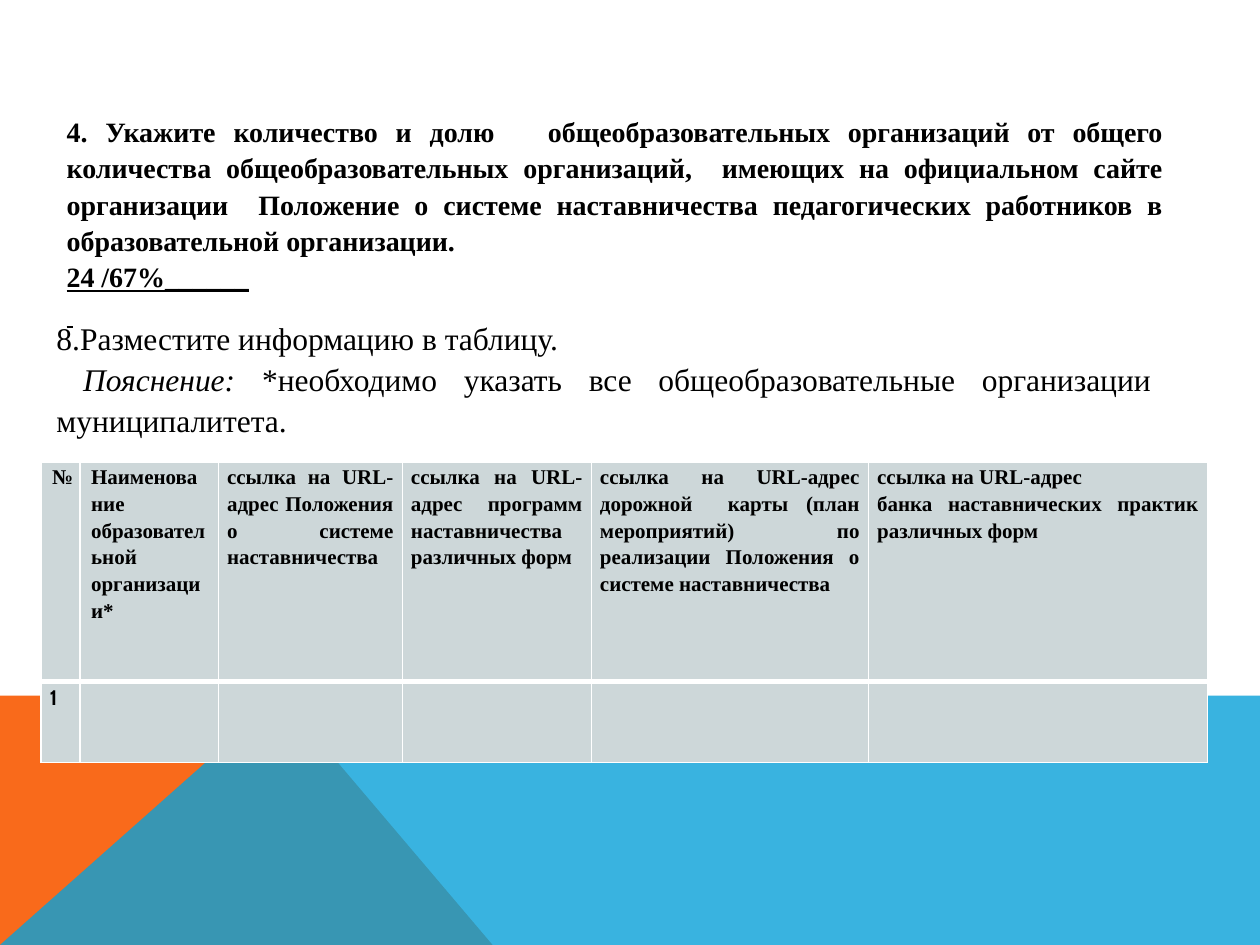
from lxml.etree import SubElement
from pptx import Presentation
from pptx.dml.color import RGBColor
from pptx.enum.text import MSO_ANCHOR, PP_ALIGN
from pptx.oxml.ns import qn
from pptx.util import Pt

COLORS = {"text": "000000", "orange": "F96A1B", "blue": "08A1D9",
          "cell": "CDD7D9", "border": "FFFFFF"}
SERIF = "Times New Roman"
HEADERS = [
    ["№"],
    ["Наименование образовательной организации*"],
    ["ссылка на URL-адрес Положения о системе наставничества "],
    ["ссылка на URL-адрес программ наставничества различных форм"],
    ["ссылка на URL-адрес дорожной  карты (план мероприятий) по реализации "
     "Положения о системе наставничества"],
    ["ссылка на URL-адрес", "банка наставнических практик различных форм"],
]
COL_WIDTHS = [22.3, 79.2, 105.1, 108, 158.4, 193.7]
ROW_HEIGHTS = [125.3, 46.1]


def rgb(name):
    return RGBColor.from_string(COLORS[name])


def add_run(p, text, size, font=SERIF, bold=False, italic=False, underline=False):
    r = p.add_run()
    r.text = text
    f = r.font
    f.size, f.name, f.color.rgb = Pt(size), font, rgb("text")
    f.bold, f.italic, f.underline = bold, italic, underline


def add_paragraph(tf, index, spacing, align=PP_ALIGN.JUSTIFY):
    p = tf.add_paragraph() if index else tf.paragraphs[0]
    p.alignment, p.line_spacing = align, spacing
    return p


def add_text(s, left, top, width, height, size, paragraphs, anchor=MSO_ANCHOR.TOP):
    tf = s.shapes.add_textbox(Pt(left), Pt(top), Pt(width), Pt(height)).text_frame
    tf.word_wrap, tf.vertical_anchor = True, anchor
    for i, runs in enumerate(paragraphs):
        p = add_paragraph(tf, i, 1.08)
        for text, style in runs:
            add_run(p, text, size, **style)


def add_polygon(s, points, color, alpha=None):
    start, *rest = [(Pt(x), Pt(y)) for x, y in points]
    fb = s.shapes.build_freeform(*start)
    fb.add_line_segments(rest, close=True)
    sp = fb.convert_to_shape()
    sp.shadow.inherit = False
    sp.fill.solid()
    sp.fill.fore_color.rgb = rgb(color)
    sp.line.fill.background()
    if alpha:
        clr = sp.fill._xPr.find(qn("a:solidFill"))[0]
        SubElement(clr, qn("a:alpha"), val=str(alpha * 1000))


def add_footer(s, left, top, width, height):
    right, bottom, peak = left + width, top + height, left + 160.6
    add_polygon(s, [(left, bottom), (left, top), (peak, top),
                    (left + 281.5, bottom)], "orange")
    add_polygon(s, [(left, bottom), (peak, top), (right, top),
                    (right, bottom)], "blue", 80)


def style_cell(cell, bottom_width):
    cell.margin_left = cell.margin_right = Pt(5)
    cell.margin_top = cell.margin_bottom = 0
    tc_pr = cell._tc.get_or_add_tcPr()
    for side, width in zip("LRTB", (1, 1, 1, bottom_width)):
        ln = SubElement(tc_pr, qn(f"a:ln{side}"), w=str(Pt(width)))
        SubElement(SubElement(ln, qn("a:solidFill")), qn("a:srgbClr"),
                   val=COLORS["border"])
    cell.fill.solid()
    cell.fill.fore_color.rgb = rgb("cell")


def set_indent(p, margin, indent=0):
    p_pr = p._p.get_or_add_pPr()
    p_pr.set("marL", str(Pt(margin)))
    p_pr.set("indent", str(Pt(indent)))


def add_links_table(s, left, top):
    tbl = s.shapes.add_table(len(ROW_HEIGHTS), len(COL_WIDTHS), Pt(left), Pt(top),
                             Pt(sum(COL_WIDTHS)), Pt(sum(ROW_HEIGHTS))).table
    for col, width in zip(tbl.columns, COL_WIDTHS):
        col.width = Pt(width)
    for row, height, bottom in zip(tbl.rows, ROW_HEIGHTS, (3, 1)):
        row.height = Pt(height)
        for cell in row.cells:
            style_cell(cell, bottom)
    for c, lines in enumerate(HEADERS):
        for i, line in enumerate(lines):
            p = add_paragraph(tbl.cell(0, c).text_frame, i, 1.15)
            if c < 2:
                set_indent(p, 1.5)
            add_run(p, line, 12, bold=True)
    p = add_paragraph(tbl.cell(1, 0).text_frame, 0, 1.15, PP_ALIGN.LEFT)
    set_indent(p, 14.4, -14.4)
    add_run(p, "1", 12, "Cabin", bold=True)


def add_question(s, left, top, width, height):
    bold, answer = {"bold": True}, {"bold": True, "underline": True}
    add_text(s, left, top, width, height, 16, [
        [("4. Укажите количество и долю   общеобразовательных организаций от общего "
          "количества общеобразовательных организаций,  имеющих на официальном сайте "
          "организации  Положение о системе наставничества педагогических работников "
          "в образовательной организации.", bold)],
        [("24 /67%______", answer)],
        [(" ", answer)],
    ])


def add_instruction(s, left, top, width, height):
    add_text(s, left, top, width, height, 18, [
        [("8.Разместите информацию в таблицу.", {})],
        [(" Пояснение:", {"italic": True}),
         (" *необходимо указать все общеобразовательные организации муниципалитета.",
          {})],
    ], MSO_ANCHOR.MIDDLE)


def main():
    prs = Presentation()
    prs.slide_width, prs.slide_height = Pt(720), Pt(540)
    s = prs.slides.add_slide(prs.slide_layouts[6])
    add_footer(s, 0, 397.5, 720, 142.5)
    add_question(s, 31, 60.5, 640.8, 404.6)
    add_links_table(s, 23.3, 264.2)
    add_instruction(s, 25.2, 179.3, 640, 72.7)
    prs.save("out.pptx")


if __name__ == "__main__":
    main()
